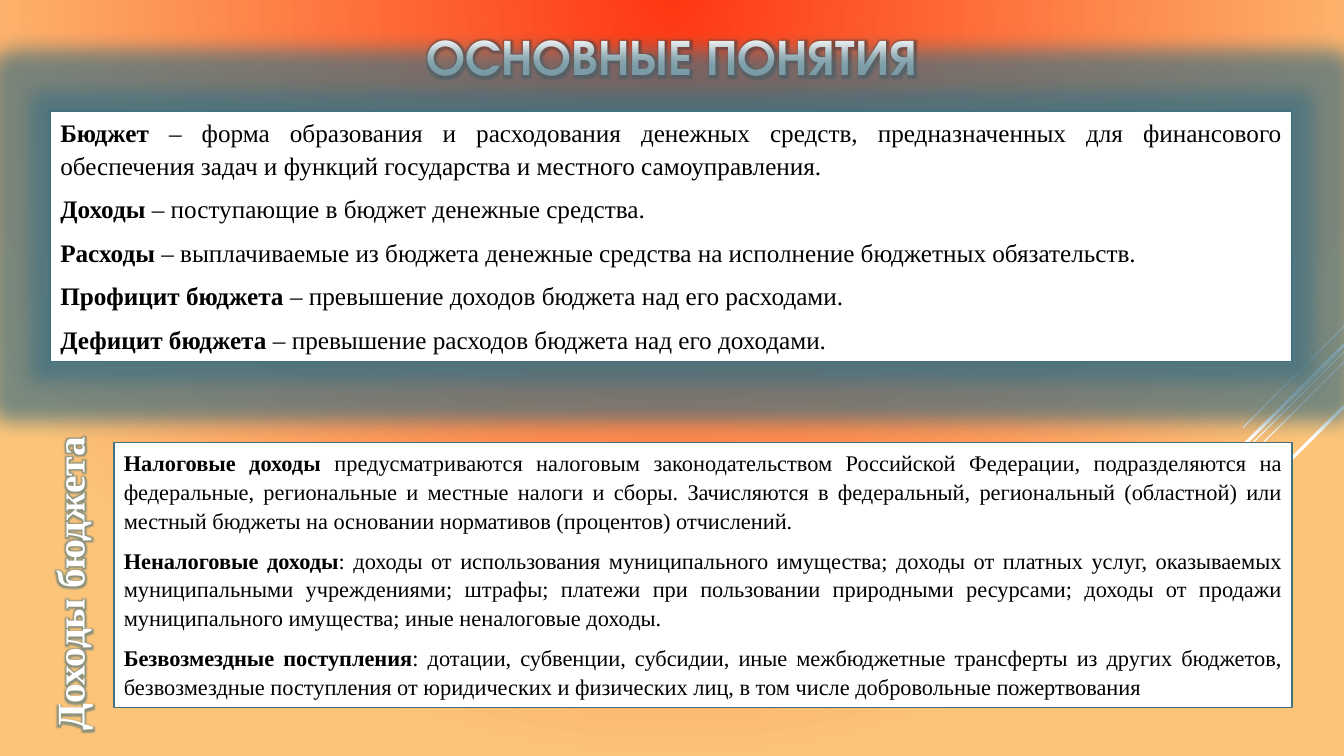
from dataclasses import dataclass

from lxml import etree
from pptx import Presentation
from pptx.dml.color import RGBColor
from pptx.enum.shapes import MSO_CONNECTOR, MSO_SHAPE
from pptx.enum.text import MSO_ANCHOR, MSO_AUTO_SIZE, PP_ALIGN
from pptx.oxml.ns import qn
from pptx.util import Cm, Pt

STRAIGHT = MSO_CONNECTOR.STRAIGHT
RECTANGLE = MSO_SHAPE.RECTANGLE
TOP, MIDDLE = MSO_ANCHOR.TOP, MSO_ANCHOR.MIDDLE
CENTER, JUSTIFY = PP_ALIGN.CENTER, PP_ALIGN.JUSTIFY
GROW = MSO_AUTO_SIZE.SHAPE_TO_FIT_TEXT


@dataclass(frozen=True)
class Theme:
    white: RGBColor = RGBColor(0xFF, 0xFF, 0xFF)
    black: RGBColor = RGBColor(0, 0, 0)
    red: RGBColor = RGBColor(0xFF, 0x37, 0x12)
    sand: RGBColor = RGBColor(0xFC, 0xC4, 0x79)
    teal: RGBColor = RGBColor(0x42, 0x71, 0x80)
    shade: RGBColor = RGBColor(0x40, 0x30, 0x30)
    title_font: str = "TeX Gyre Adventor"
    body_font: str = "Times New Roman"
    title_size: int = 36
    label_size: int = 28
    terms_size: int = 18
    income_size: int = 16


theme = Theme()


def format_span(span, font, size, color, bold):
    span.font.name = font
    span.font.size = Pt(size)
    span.font.color.rgb = color
    span.font.bold = bold


def add_effects(anchor, radius=0, color=None, opacity=0):
    """Put an effect list after the anchor element: a glow, or none if radius is 0."""
    effects = etree.Element(qn("a:effectLst"))
    if radius:
        glow = etree.SubElement(effects, qn("a:glow"), rad=str(Cm(radius)))
        tint = etree.SubElement(glow, qn("a:srgbClr"), val=str(color))
        etree.SubElement(tint, qn("a:alpha"), val=str(opacity * 1000))
    anchor.addnext(effects)


deck = Presentation()
deck.slide_width, deck.slide_height = Cm(33.87), Cm(19.05)
page = deck.slides.add_slide(deck.slide_layouts[5])

# Background: circular gradient from the top centre
backdrop = page.background.fill
backdrop.gradient()
for stop, color, position in zip(backdrop.gradient_stops, (theme.red, theme.sand), (0, 1)):
    stop.color.rgb = color
    stop.position = position
linear = page.background._cSld.find(".//" + qn("a:lin"))
circle = etree.Element(qn("a:path"), path="circle")
etree.SubElement(circle, qn("a:fillToRect"), l="0", t="0", r="0", b="100000")
linear.getparent().replace(linear, circle)

# Diagonal rays from the right edge: start height, run, line width
rays = [(8.23, 2.54, 0.75), (8.86, 8.28, 0.75), (9.12, 5.26, 0.75),
        (8.69, 4.85, 2.25), (10.24, 3.53, 2.25)]
for top, run, width in rays:
    ray = page.shapes.add_connector(STRAIGHT, Cm(33.87), Cm(top), Cm(33.87 - run), Cm(top + run))
    ray.line.color.rgb = theme.white
    ray.line.width = Pt(width)
    add_effects(ray.line._ln)

# Title
title = page.shapes.title
title.left, title.top, title.width, title.height = Cm(0), Cm(0.25), Cm(33.87), Cm(2.31)
title.text_frame.text = "ОСНОВНЫЕ ПОНЯТИЯ"
title.text_frame.vertical_anchor = MIDDLE
title.text_frame.paragraphs[0].alignment = CENTER
title_span = title.text_frame.paragraphs[0].runs[0]
format_span(title_span, theme.title_font, theme.title_size, theme.white, True)
add_effects(title_span.font._element.find(qn("a:solidFill")), 0.2, theme.shade, 60)

# Definition boxes: left, top, width, height, type size, glow radius, entries
terms = [
    ("Бюджет", " – форма образования и расходования денежных средств, предназначенных для "
     "финансового обеспечения задач и функций государства и местного самоуправления."),
    ("Доходы", " – поступающие в бюджет денежные средства."),
    ("Расходы", " – выплачиваемые из бюджета денежные средства на исполнение бюджетных "
     "обязательств."),
    ("Профицит бюджета ", "– превышение доходов бюджета над его расходами."),
    ("Дефицит бюджета ", "– превышение расходов бюджета над его доходами."),
]
incomes = [
    ("Налоговые доходы ", "предусматриваются налоговым законодательством Российской Федерации, "
     "подразделяются на федеральные, региональные и местные налоги и сборы. Зачисляются в "
     "федеральный, региональный (областной) или местный бюджеты на основании нормативов "
     "(процентов) отчислений."),
    ("Неналоговые доходы", ": доходы от использования муниципального имущества; доходы от "
     "платных услуг, оказываемых муниципальными учреждениями; штрафы; платежи при пользовании "
     "природными ресурсами; доходы от продажи муниципального имущества; иные неналоговые "
     "доходы."),
    ("Безвозмездные поступления", ": дотации, субвенции, субсидии, иные межбюджетные трансферты "
     "из других бюджетов, безвозмездные поступления от юридических и физических лиц, в том "
     "числе добровольные пожертвования"),
]
boxes = [(1.27, 2.79, 31.3, 6.32, theme.terms_size, 1, terms),
         (2.87, 11.15, 29.7, 6.68, theme.income_size, 0, incomes)]
for left, top, width, height, size, glow_radius, entries in boxes:
    box = page.shapes.add_shape(RECTANGLE, Cm(left), Cm(top), Cm(width), Cm(height))
    box.fill.solid()
    box.fill.fore_color.rgb = theme.white
    box.line.color.rgb = theme.teal
    box.line.width = Pt(1.25)
    add_effects(box.line._ln, glow_radius, theme.teal, 70)
    frame = box.text_frame
    frame.word_wrap = True
    frame.auto_size = GROW
    frame.vertical_anchor = TOP
    for index, entry in enumerate(entries):
        para = frame.add_paragraph() if index else frame.paragraphs[0]
        para.alignment = JUSTIFY
        para.line_spacing = 1.07
        para.space_after = Pt(8)
        for text, bold in zip(entry, (True, False)):
            span = para.add_run()
            span.text = text
            format_span(span, theme.body_font, size, theme.black, bold)

# Vertical label of the lower box
label = page.shapes.add_textbox(Cm(-2.26), Cm(13.94), Cm(8), Cm(1.45))
label.rotation = 270
label.text_frame.text = "Доходы бюджета"
label.text_frame.word_wrap = False
label.text_frame.auto_size = GROW
label.text_frame.vertical_anchor = MIDDLE
label_span = label.text_frame.paragraphs[0].runs[0]
format_span(label_span, theme.body_font, theme.label_size, theme.white, True)
add_effects(label_span.font._element.find(qn("a:solidFill")), 0.2, theme.teal, 60)

deck.save("out.pptx")
